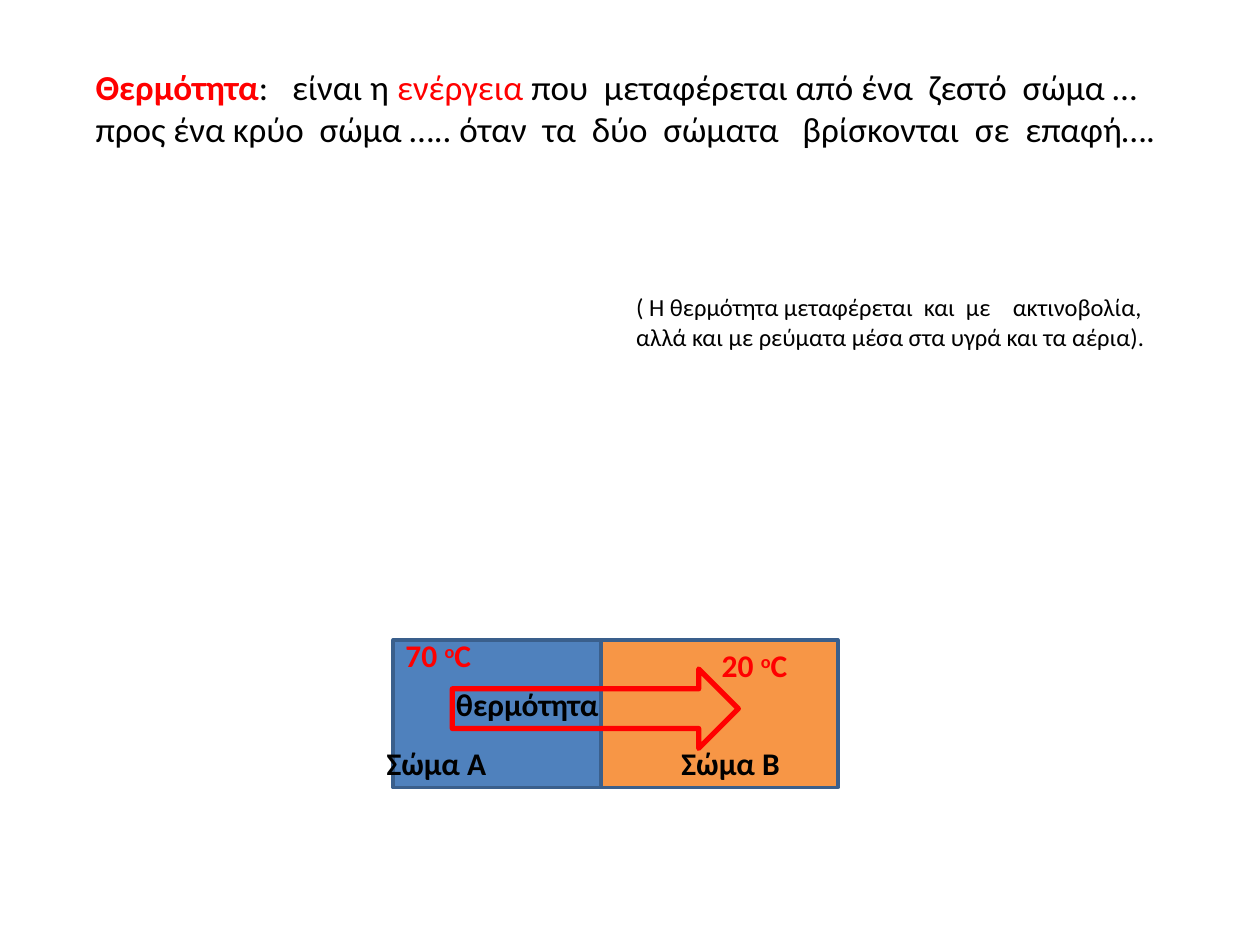
from pptx import Presentation
from pptx import util as u
from pptx.dml.color import RGBColor
from pptx.enum import shapes, text

W, H = 10, 7.5
FONT = "Calibri"
COLORS = {"black": "000000", "red": "FF0000", "hot": "4F81BD",
          "cold": "F79646", "edge": "3A5F8C"}

BODY_LEFT, BODY_TOP, BODY_HEIGHT = 3.12, 5.08, 1.17
BODIES = [("hot", 1.65), ("cold", 1.88)]
ARROW = (3.59, 5.31, 2.27, 0.63)
LABEL_W, LABEL_H, NAME_TOP = 1.33, 0.4, 5.86


def temperature(degrees):
    return [(f"{degrees} ", "red", True, 0), ("ο", "red", True, 30),
            ("C", "red", True, 0)]


def label(words):
    return [(words, "black", True, 0)]


DEFINITION = [
    ("Θερμότητα", "red", True, 0),
    (":   είναι η ", "black", False, 0),
    ("ενέργεια", "red", False, 0),
    (" που  μεταφέρεται από ένα  ζεστό  σώμα … προς ένα κρύο  σώμα ….. "
     "όταν  τα  δύο  σώματα   βρίσκονται  σε  επαφή….", "black", False, 0),
]
NOTE = [("( Η θερμότητα μεταφέρεται  και  με    ακτινοβολία, αλλά και με "
         "ρεύματα μέσα στα υγρά και τα αέρια).", "black", False, 0)]

PARAGRAPHS = [
    ((0.16, 0.47, 9.38, 1.45), 20, DEFINITION),
    ((4.45, 2.27, 5, 0.57), 14, NOTE),
]
LABELS = [
    ((2.97, NAME_TOP, LABEL_W, LABEL_H), label("Σώμα Α")),
    ((5.31, NAME_TOP, LABEL_W, LABEL_H), label("Σώμα Β")),
    ((3.12, 5, LABEL_W, LABEL_H), temperature(70)),
    ((5.63, 5.08, LABEL_W, LABEL_H), temperature(20)),
    ((3.52, 5.39, 1.88, LABEL_H), label("θερμότητα")),
]


def rgb(name):
    return RGBColor.from_string(COLORS[name])


def add_text(s, box, size, runs, indent=0):
    tf = s.shapes.add_textbox(*map(u.Inches, box)).text_frame
    tf.word_wrap = True
    p = tf.paragraphs[0]
    p.alignment = text.PP_ALIGN.LEFT
    if indent:
        p.level = 1
        pPr = p._p.get_or_add_pPr()
        pPr.set("marL", str(u.Inches(indent)))
        pPr.set("indent", "0")
    for words, color, bold, raised in runs:
        r = p.add_run()
        r.text = words
        r.font.name = FONT
        r.font.size = u.Pt(size)
        r.font.bold = bold
        r.font.color.rgb = rgb(color)
        if raised:
            r.font._element.set("baseline", str(raised * 1000))


def add_figure(s, kind, box, line, width, fill=None):
    sp = s.shapes.add_shape(kind, *map(u.Inches, box))
    sp.shadow.inherit = False
    if fill:
        sp.fill.solid()
        sp.fill.fore_color.rgb = rgb(fill)
    else:
        sp.fill.background()
    sp.line.color.rgb = rgb(line)
    sp.line.width = u.Pt(width)


def main():
    prs = Presentation()
    prs.slide_width, prs.slide_height = u.Inches(W), u.Inches(H)
    s = prs.slides.add_slide(prs.slide_layouts[6])

    for box, size, runs in PARAGRAPHS:
        add_text(s, box, size, runs, indent=0.5)

    left = BODY_LEFT
    for fill, width in BODIES:
        add_figure(s, shapes.MSO_SHAPE.RECTANGLE,
                   (left, BODY_TOP, width, BODY_HEIGHT), "edge", 2, fill)
        left += width
    add_figure(s, shapes.MSO_SHAPE.RIGHT_ARROW, ARROW, "red", 3)

    for box, runs in LABELS:
        add_text(s, box, 18, runs)

    prs.save("out.pptx")


if __name__ == "__main__":
    main()
